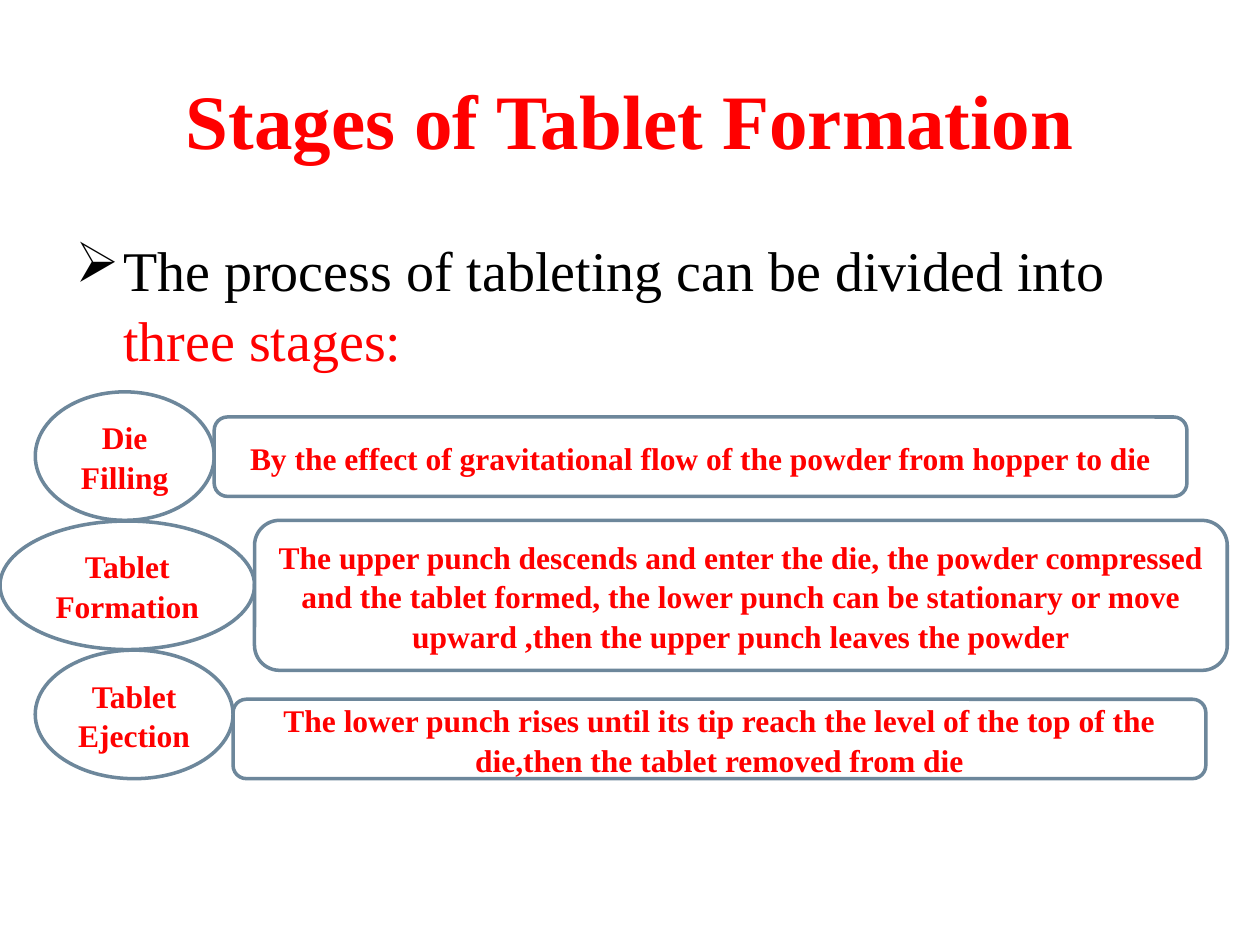
"""Build the slide on the three stages of tablet formation."""
from dataclasses import dataclass

from lxml import etree
from pptx import Presentation
from pptx import util as u
from pptx.dml.color import RGBColor
from pptx.enum import shapes, text
from pptx.oxml.ns import qn

RED = RGBColor(0xFF, 0x00, 0x00)
BLACK = RGBColor(0x00, 0x00, 0x00)
WHITE = RGBColor(0xFF, 0xFF, 0xFF)
SLATE = RGBColor(0x6D, 0x87, 0x9B)
FONT = "Times New Roman"
LINE_SPACING = 1.05
FIRST_STAGE_TOP = 3.11
STAGE_HEIGHT = 1.02
STAGE_PITCH = 1.025
DETAIL_WIDTH = 7.72


@dataclass
class Stage:
    """A stage name in an ellipse with its detail box to the right."""
    name: str
    detail: str
    left: float
    width: float
    detail_top: float
    detail_height: float


STAGES = [
    Stage("Die Filling",
          "By the effect of gravitational flow of the powder from hopper to die",
          0.28, 1.42, 3.31, 0.63),
    Stage("Tablet Formation",
          "The upper punch descends and enter the die, the powder compressed "
          "and the tablet formed, the lower punch can be stationary or move "
          "upward ,then the upper punch leaves the powder",
          0, 2.02, 4.13, 1.19),
    Stage("Tablet Ejection",
          "The lower punch rises until its tip reach the level of the top of "
          "the die,then the tablet removed from die",
          0.28, 1.57, 5.55, 0.63),
]


def style_run(run, size: int, color: RGBColor, bold: bool = False) -> None:
    """Apply the slide font to a run."""
    run.font.name = FONT
    run.font.size = u.Pt(size)
    run.font.bold = bold
    run.font.color.rgb = color


def write_centred(frame, words: str, size: int) -> None:
    """Write bold red text in the middle of a frame."""
    frame.word_wrap = True
    frame.vertical_anchor = text.MSO_ANCHOR.MIDDLE
    frame.text = words
    paragraph = frame.paragraphs[0]
    paragraph.alignment = text.PP_ALIGN.CENTER
    paragraph.line_spacing = LINE_SPACING
    style_run(paragraph.runs[0], size, RED, bold=True)


def add_title(slide) -> None:
    """Add the slide title."""
    title = slide.shapes.add_textbox(
        u.Inches(0.5), u.Inches(0.3), u.Inches(9), u.Inches(1.25))
    write_centred(title.text_frame, "Stages of Tablet Formation", 44)


def add_introduction(slide) -> None:
    """Add the bulleted sentence that introduces the stages."""
    introduction = slide.shapes.add_textbox(
        u.Inches(0.5), u.Inches(1.75), u.Inches(9), u.Inches(4.95))
    frame = introduction.text_frame
    frame.word_wrap = True
    frame.margin_top = u.Inches(0.09)
    sentence = frame.paragraphs[0]
    sentence.line_spacing = LINE_SPACING
    properties = sentence._p.get_or_add_pPr()
    indent = u.Inches(0.38)
    properties.set("marL", str(indent))
    properties.set("indent", str(-indent))
    etree.SubElement(properties, qn("a:buChar")).set("char", "➢")
    for words, color in (("The process of tableting can be divided into ", BLACK),
                         ("three stages:", RED)):
        run = sentence.add_run()
        run.text = words
        style_run(run, 32, color)


def add_outlined(slide, kind, left: float, top: float, width: float,
                 height: float, words: str) -> None:
    """Add a white shape with a slate outline and centred text."""
    outlined = slide.shapes.add_shape(
        kind, u.Inches(left), u.Inches(top), u.Inches(width), u.Inches(height))
    outlined.shadow.inherit = False
    outlined.fill.solid()
    outlined.fill.fore_color.rgb = WHITE
    outlined.line.color.rgb = SLATE
    outlined.line.width = u.Pt(2)
    write_centred(outlined.text_frame, words, 18)


def add_stage_name(slide, stage: Stage, top: float) -> None:
    """Add the ellipse that names a stage."""
    add_outlined(slide, shapes.MSO_SHAPE.OVAL, stage.left, top,
                 stage.width, STAGE_HEIGHT, stage.name)


def add_stage_detail(slide, stage: Stage) -> None:
    """Add the detail box that touches the stage's ellipse."""
    add_outlined(slide, shapes.MSO_SHAPE.ROUNDED_RECTANGLE,
                 stage.left + stage.width, stage.detail_top,
                 DETAIL_WIDTH, stage.detail_height, stage.detail)


def main() -> None:
    """Assemble and save the presentation."""
    presentation = Presentation()
    presentation.slide_width = u.Inches(10)
    presentation.slide_height = u.Inches(7.5)
    slide = presentation.slides.add_slide(presentation.slide_layouts[6])
    add_title(slide)
    add_introduction(slide)
    for index, stage in enumerate(STAGES):
        add_stage_name(slide, stage, FIRST_STAGE_TOP + index * STAGE_PITCH)
    for stage in STAGES:
        add_stage_detail(slide, stage)
    presentation.save("out.pptx")


if __name__ == "__main__":
    main()
